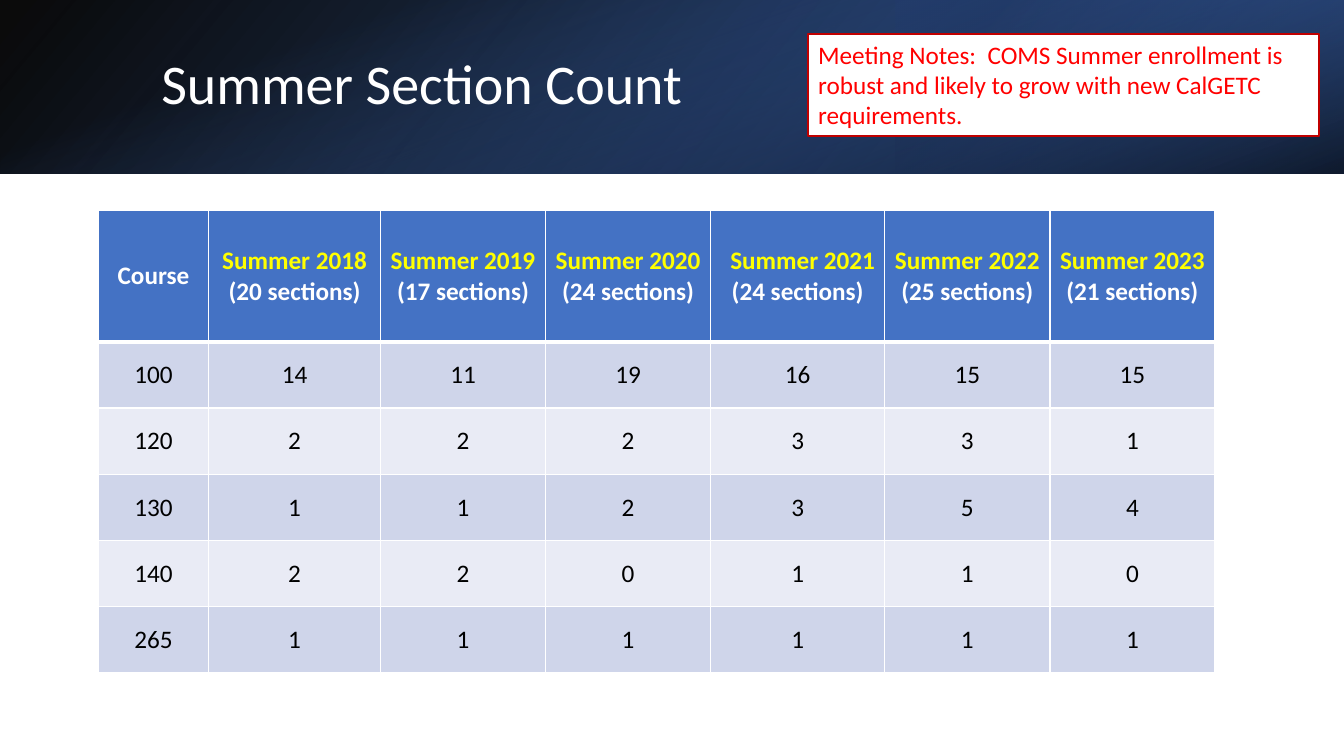
from pptx import Presentation
from pptx.dml.color import RGBColor
from pptx.enum.shapes import MSO_SHAPE
from pptx.enum.text import MSO_ANCHOR, MSO_AUTO_SIZE, PP_ALIGN
from pptx.oxml import parse_xml
from pptx.oxml.ns import nsdecls, qn
from pptx.util import Cm, Pt

RECT = MSO_SHAPE.RECTANGLE
TOP, MIDDLE = MSO_ANCHOR.TOP, MSO_ANCHOR.MIDDLE
LEFT, CENTER = PP_ALIGN.LEFT, PP_ALIGN.CENTER
GROW = MSO_AUTO_SIZE.SHAPE_TO_FIT_TEXT

HEX = {
    "white": "FFFFFF", "black": "000000", "blue": "4472C4",
    "deep": "2F5597", "navy": "203864", "yellow": "FFFF00",
    "red": "FF0000", "edge": "C00000", "odd": "CFD5EA", "even": "E9EBF5",
}
WIDE, HIGH, BAND = 33.87, 19.05, 4.38
FONT = "Calibri"

TERMS = [
    ("Summer 2018", "(20 sections)"), ("Summer 2019", "(17 sections)"),
    ("Summer 2020", "(24 sections)"), ("Summer 2021", "(24 sections)"),
    ("Summer 2022", "(25 sections)"), ("Summer 2023", "(21 sections)"),
]
COUNTS = [
    (100, 14, 11, 19, 16, 15, 15),
    (120, 2, 2, 2, 3, 3, 1),
    (130, 1, 1, 2, 3, 5, 4),
    (140, 2, 2, 0, 1, 1, 0),
    (265, 1, 1, 1, 1, 1, 1),
]
COLS = (2.78, 4.33, 4.16, 4.16, 4.39, 4.16, 4.16)
HEAD, ROW = 3.3, 1.67


def rgb(name):
    return RGBColor.from_string(HEX[name])


def apply(item, **values):
    for key, value in values.items():
        setattr(item, key, value)


def write(para, text, color, size=18, bold=False, align=LEFT):
    para.alignment = align
    run = para.add_run()
    run.text = text
    apply(run.font, name=FONT, size=Pt(size), bold=bold)
    run.font.color.rgb = rgb(color)


def add_rect(slide, box):
    rect = slide.shapes.add_shape(RECT, *map(Cm, box))
    rect.shadow.inherit = False
    return rect


def add_fade(slide, box, stops, angle, turn=0, flip=False):
    """Add a borderless rectangle; stops are (position, colour, opacity)."""
    rect = add_rect(slide, box)
    rect.rotation = turn
    rect.line.fill.background()
    rect.fill.background()
    marks = "".join(
        f'<a:gs pos="{pos * 1000}"><a:srgbClr val="{HEX[color]}">'
        f'<a:alpha val="{alpha * 1000}"/></a:srgbClr></a:gs>'
        for pos, color, alpha in stops)
    props = rect.element.spPr
    props.replace(props.find(qn("a:noFill")), parse_xml(
        f'<a:gradFill {nsdecls("a")} rotWithShape="1"><a:gsLst>{marks}</a:gsLst>'
        f'<a:lin ang="{angle * 60000}" scaled="0"/></a:gradFill>'))
    if flip:
        props.get_or_add_xfrm().set("flipH", "1")


def add_band(slide, left, top, width, height):
    add_fade(slide, (left, top, width, height),
             [(0, "black", 96), (100, "deep", 100)], 140, flip=True)
    add_fade(slide, (left + width * 2 / 3, top, width / 3, height),
             [(19, "navy", 68), (100, "blue", 79)], 320, turn=180, flip=True)
    shift = (width - height) / 2
    add_fade(slide, (left + shift, top - shift, height, width),
             [(23, "blue", 0), (99, "black", 74)], 340, turn=90)


def add_title(slide, left, top, width, height):
    title = slide.shapes.title
    apply(title, left=Cm(left), top=Cm(top), width=Cm(width), height=Cm(height))
    apply(title.text_frame, vertical_anchor=MIDDLE, word_wrap=True)
    para = title.text_frame.paragraphs[0]
    para.line_spacing = 0.9
    write(para, "Summer Section Count", "white", size=40)
    title.element.getparent().append(title.element)  # bring above the band


def add_note(slide, *box):
    note = add_rect(slide, box)
    note.fill.solid()
    note.fill.fore_color.rgb = rgb("white")
    note.line.color.rgb = rgb("edge")
    note.line.width = Pt(1.25)
    apply(note.text_frame, word_wrap=True, vertical_anchor=TOP, auto_size=GROW)
    write(note.text_frame.paragraphs[0],
          "Meeting Notes:  COMS Summer enrollment is robust and likely to grow "
          "with new CalGETC requirements.", "red")


def dress(cell, fill, top=1, bottom=1):
    """Fill a cell and give it white borders, widths in points."""
    apply(cell, vertical_anchor=MIDDLE, margin_left=Cm(0.2), margin_right=Cm(0.2),
          margin_top=Cm(0.1), margin_bottom=Cm(0.1))
    cell.fill.solid()
    cell.fill.fore_color.rgb = rgb(fill)
    props = cell._tc.get_or_add_tcPr()
    sides = {"lnL": 1, "lnR": 1, "lnT": top, "lnB": bottom}
    for spot, (side, width) in enumerate(sides.items()):
        props.insert(spot, parse_xml(
            f'<a:{side} {nsdecls("a")} w="{Pt(width)}"><a:solidFill>'
            f'<a:srgbClr val="{HEX["white"]}"/></a:solidFill></a:{side}>'))


def add_counts(slide, left, top):
    size = (sum(COLS), HEAD + ROW * len(COUNTS))
    table = slide.shapes.add_table(
        len(COUNTS) + 1, len(COLS), *map(Cm, (left, top, *size))).table
    for col, width in zip(table.columns, COLS):
        col.width = Cm(width)
    for spot, row in enumerate(table.rows):
        row.height = Cm(ROW if spot else HEAD)

    for col, lines in enumerate([("Course",), *TERMS]):
        cell = table.cell(0, col)
        dress(cell, "blue", bottom=3)
        frame = cell.text_frame
        colors = ("yellow", "white") if col else ("white",)
        for spot, (line, color) in enumerate(zip(lines, colors)):
            para = frame.add_paragraph() if spot else frame.paragraphs[0]
            write(para, line, color, bold=True, align=CENTER)
            if line == "Summer 2021":
                para._p.get_or_add_pPr().set("marL", str(Cm(0.25)))

    for row, counts in enumerate(COUNTS, 1):
        for col, count in enumerate(counts):
            cell = table.cell(row, col)
            dress(cell, "odd" if row % 2 else "even", top=3 if row == 1 else 1)
            write(cell.text_frame.paragraphs[0], str(count), "black", align=CENTER)


def main():
    deck = Presentation()
    apply(deck, slide_width=Cm(WIDE), slide_height=Cm(HIGH))
    slide = deck.slides.add_slide(deck.slide_layouts[5])
    add_band(slide, 0, 0, WIDE, BAND)
    add_title(slide, 3.81, 0.96, 27.89, 2.44)
    add_counts(slide, 2.48, 5.31)
    add_note(slide, 20.37, 0.86, 12.88, 2.57)
    deck.save("out.pptx")


if __name__ == "__main__":
    main()
